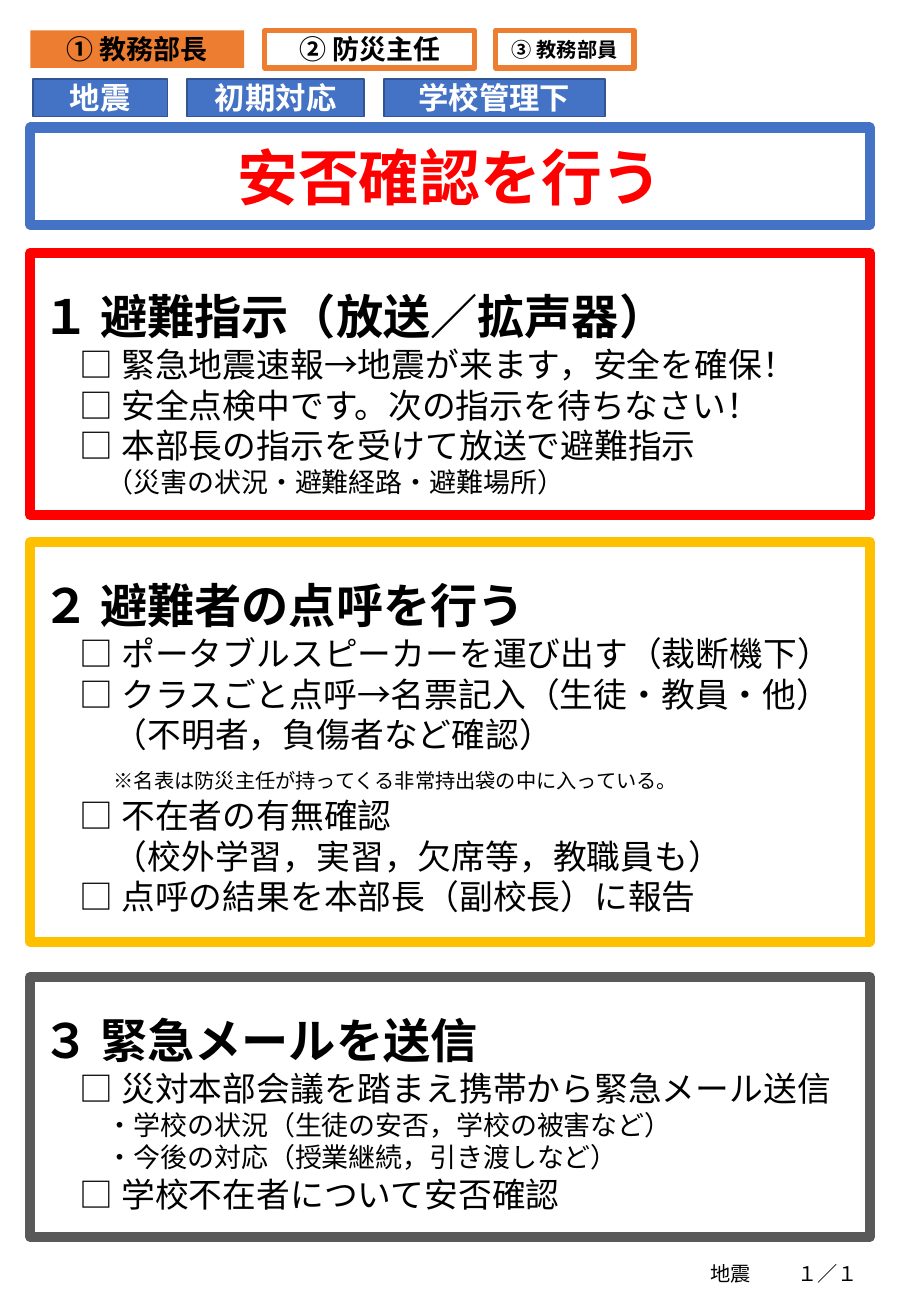
from lxml import etree
from pptx import Presentation
from pptx.dml.color import RGBColor
from pptx.enum.shapes import MSO_SHAPE
from pptx.enum.text import MSO_ANCHOR, PP_ALIGN
from pptx.oxml.ns import qn
from pptx.util import Emu, Pt

RECTANGLE = MSO_SHAPE.RECTANGLE
TOP, MIDDLE = MSO_ANCHOR.TOP, MSO_ANCHOR.MIDDLE
LEFT, CENTER, RIGHT = PP_ALIGN.LEFT, PP_ALIGN.CENTER, PP_ALIGN.RIGHT

BLACK = RGBColor(0x00, 0x00, 0x00)
WHITE = RGBColor(0xFF, 0xFF, 0xFF)
RED = RGBColor(0xFF, 0x00, 0x00)
ORANGE = RGBColor(0xED, 0x7D, 0x31)
BLUE = RGBColor(0x44, 0x72, 0xC4)
NAVY = RGBColor(0x32, 0x54, 0x91)
YELLOW = RGBColor(0xFF, 0xC0, 0x00)
GRAY = RGBColor(0x59, 0x59, 0x59)

JAPANESE_FONT = "Noto Sans CJK JP"
FOOTER_FONT = "Calibri"

EMU_PER_PX = 9144  # 100 px to the inch
PANEL_LEFT, PANEL_WIDTH = 25, 691
TAG_HEIGHT = 31
ITEM_INDENT = 31

# Tags: text, left, width, then size, fill and outline
ROLE_TAGS = [
    ("① 教務部長", 25, 176, 16, ORANGE, None),
    ("② 防災主任", 218, 173, 16, WHITE, ORANGE),
    ("③ 教務部員", 408, 114, 12, WHITE, ORANGE),
]
TOPIC_TAGS = [("地震", 27, 111), ("初期対応", 154, 146), ("学校管理下", 316, 182)]

# Sections: top, height, outline, heading, items; an item is a list of (text, size)
SECTIONS = [
    (208, 216, RED, "１ 避難指示（放送／拡声器）", [
        [("□ 緊急地震速報→地震が来ます，安全を確保！", 20)],
        [("□ 安全点検中です。次の指示を待ちなさい！", 20)],
        [("□ 本部長の指示を受けて放送で避難指示", 20)],
        [("　（災害の状況・避難経路・避難場所）", 16)],
    ]),
    (446, 329, YELLOW, "２ 避難者の点呼を行う", [
        [("□ ポータブルスピーカーを運び出す（裁断機下）", 20)],
        [("□ クラスごと点呼→名票記入（生徒・教員・他）", 20)],
        [("　（不明者，負傷者など確認）", 20)],
        [("　", 20), ("※名表は防災主任が持ってくる非常持出袋の中に入っている。", 12)],
        [("□ 不在者の有無確認", 20)],
        [("　（校外学習，実習，欠席等，教職員も）", 20)],
        [("□ 点呼の結果を本部長（副校長）に報告", 20)],
    ]),
    (804, 214, GRAY, "３ 緊急メールを送信", [
        [("□ 災対本部会議を踏まえ携帯から緊急メール送信", 20)],
        [("　・学校の状況（生徒の安否，学校の被害など）", 16)],
        [("　・今後の対応（授業継続，引き渡しなど）", 16)],
        [("□ 学校不在者について安否確認", 20)],
    ]),
]


def px(length):
    return Emu(length * EMU_PER_PX)


def add_run(paragraph, text, size, color=BLACK, bold=False, font=JAPANESE_FONT):
    run = paragraph.add_run()
    run.text = text
    run.font.size = Pt(size)
    run.font.bold = bold
    run.font.color.rgb = color
    run.font.name = font
    latin = run.font._element.find(qn("a:latin"))
    east_asian = etree.Element(qn("a:ea"), typeface=JAPANESE_FONT)
    latin.addnext(east_asian)


def add_box(slide, left, top, width, height, fill, outline, outline_width):
    shape = slide.shapes.add_shape(RECTANGLE, px(left), px(top), px(width), px(height))
    shape.shadow.inherit = False
    shape.fill.solid()
    shape.fill.fore_color.rgb = fill
    if outline is None:
        shape.line.fill.background()
    else:
        shape.line.color.rgb = outline
        shape.line.width = Pt(outline_width)
    shape.text_frame.word_wrap = True
    return shape


def add_label(slide, box, text, size, color, fill, outline, outline_width):
    shape = add_box(slide, *box, fill, outline, outline_width)
    shape.text_frame.vertical_anchor = MIDDLE
    paragraph = shape.text_frame.paragraphs[0]
    paragraph.alignment = CENTER
    add_run(paragraph, text, size, color, bold=True)


def add_section(slide, top, height, outline, heading, items):
    shape = add_box(slide, PANEL_LEFT, top, PANEL_WIDTH, height, WHITE, outline, 6)
    frame = shape.text_frame
    frame.vertical_anchor = TOP
    paragraph = frame.paragraphs[0]
    paragraph.alignment = LEFT
    paragraph.line_spacing = 1.5
    add_run(paragraph, heading, 28, bold=True)
    for item in items:
        paragraph = frame.add_paragraph()
        paragraph.alignment = LEFT
        paragraph._p.get_or_add_pPr().set("marL", str(px(ITEM_INDENT)))
        for text, size in item:
            add_run(paragraph, text, size)


def add_footer(slide, left, text, alignment):
    text_box = slide.shapes.add_textbox(px(left), px(1033), px(71), px(31))
    text_box.text_frame.word_wrap = True
    paragraph = text_box.text_frame.paragraphs[0]
    paragraph.alignment = alignment
    add_run(paragraph, text, 12, font=FOOTER_FONT)


def main():
    presentation = Presentation()
    presentation.slide_width = px(750)
    presentation.slide_height = px(1083)
    slide = presentation.slides.add_slide(presentation.slide_layouts[6])

    # Roles and topics
    for text, left, width, size, fill, outline in ROLE_TAGS:
        add_label(slide, (left, 25, width, TAG_HEIGHT), text, size, BLACK, fill, outline, 3)
    for text, left, width in TOPIC_TAGS:
        add_label(slide, (left, 65, width, TAG_HEIGHT), text, 18, WHITE, BLUE, NAVY, 1)

    # Title
    title_box = (PANEL_LEFT, 105, PANEL_WIDTH, 80)
    add_label(slide, title_box, "安否確認を行う", 36, RED, WHITE, BLUE, 6)

    # Checklists
    for section in SECTIONS:
        add_section(slide, *section)

    # Footer
    add_footer(slide, 575, "地震", LEFT)
    add_footer(slide, 645, "１／１", RIGHT)

    presentation.save("out.pptx")


if __name__ == "__main__":
    main()
